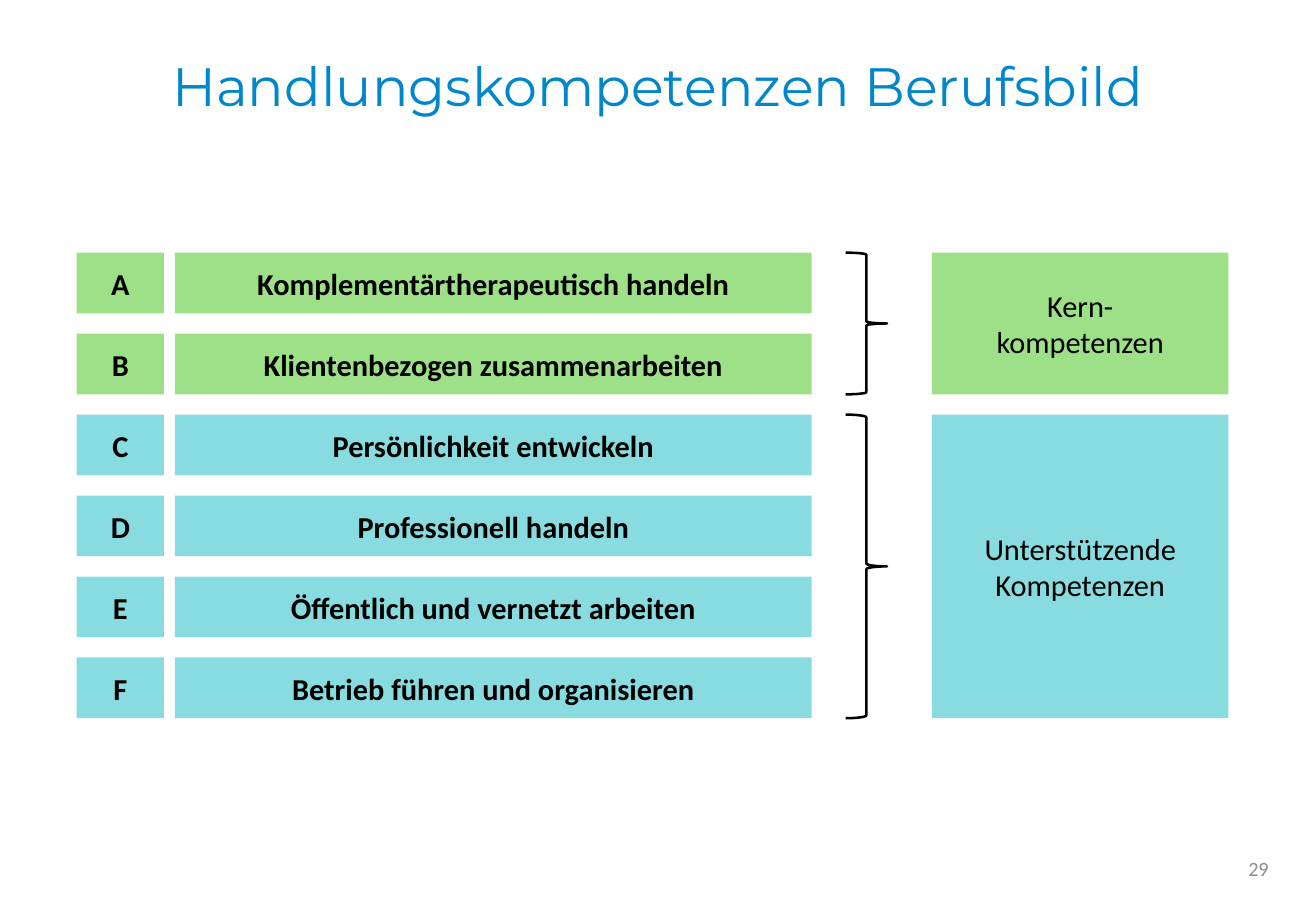
from pptx import Presentation
from pptx.dml.color import RGBColor
from pptx.enum.shapes import MSO_SHAPE
from pptx.enum.text import MSO_ANCHOR, PP_ALIGN
from pptx.util import Inches, Pt

# Content
TITLE = "Handlungskompetenzen Berufsbild"
PAGE_NUMBER = "29"
# fill, summary lines, brace curvature, competences
GROUPS = [
    ("9DE088", ["Kern-", "kompetenzen"], 0.052, [
        ("A", "Komplementärtherapeutisch handeln"),
        ("B", "Klientenbezogen zusammenarbeiten"),
    ]),
    ("88DCE0", ["Unterstützende", "Kompetenzen"], 0.069, [
        ("C", "Persönlichkeit entwickeln"),
        ("D", "Professionell handeln"),
        ("E", "Öffentlich und vernetzt arbeiten"),
        ("F", "Betrieb führen und organisieren"),
    ]),
]

# Grid in inches: each column is (left, width)
WIDTH, HEIGHT = 10.83, 7.5
LETTER, NAME, BRACE, SUMMARY = (0.63, 0.72), (1.44, 5.24), (6.96, 0.34), (7.67, 2.44)
TOP, ROW_HEIGHT, ROW_STEP = 2.08, 0.5, 2 / 3


def color(value):
    return RGBColor.from_string(value)


def write(shape, lines, size, ink="000000", font="Calibri", bold=False,
          align=PP_ALIGN.CENTER, wrap=False):
    frame = shape.text_frame
    frame.word_wrap = wrap
    frame.vertical_anchor = MSO_ANCHOR.MIDDLE
    frame.text = "\n".join(lines)
    for para in frame.paragraphs:
        para.alignment = align
        para.font.size = Pt(size)
        para.font.name = font
        para.font.bold = bold
        para.font.color.rgb = color(ink)


def add_shape(page, kind, column, top, height):
    left, width = column
    shape = page.shapes.add_shape(
        kind, Inches(left), Inches(top), Inches(width), Inches(height))
    shape.shadow.inherit = False
    return shape


def add_box(page, column, top, height, fill, lines, bold=False):
    box = add_shape(page, MSO_SHAPE.RECTANGLE, column, top, height)
    box.fill.solid()
    box.fill.fore_color.rgb = color(fill)
    box.line.fill.background()
    write(box, lines, 18, bold=bold)


def add_brace(page, top, height, curvature):
    brace = add_shape(page, MSO_SHAPE.RIGHT_BRACE, BRACE, top, height)
    brace.adjustments[0] = curvature
    brace.fill.background()
    brace.line.color.rgb = color("000000")
    brace.line.width = Pt(1.5)


def main():
    deck = Presentation()
    deck.slide_width, deck.slide_height = Inches(WIDTH), Inches(HEIGHT)
    page = deck.slides.add_slide(deck.slide_layouts[6])

    # Title and page number
    title = page.shapes.add_textbox(0, 0, deck.slide_width, Inches(1.39))
    write(title, [TITLE], 32, "0086CA", "Montserrat")
    number = page.shapes.add_textbox(
        Inches(8.01), Inches(6.95), Inches(2.53), Inches(0.4))
    write(number, [PAGE_NUMBER], 12, "8C8C8C", align=PP_ALIGN.RIGHT, wrap=True)

    # Competence rows, each group with its brace and summary
    top = TOP
    for fill, summary, curvature, competences in GROUPS:
        height = (len(competences) - 1) * ROW_STEP + ROW_HEIGHT
        add_brace(page, top, height, curvature)
        add_box(page, SUMMARY, top, height, fill, summary)
        for letter, name in competences:
            add_box(page, LETTER, top, ROW_HEIGHT, fill, [letter], bold=True)
            add_box(page, NAME, top, ROW_HEIGHT, fill, [name], bold=True)
            top += ROW_STEP

    deck.save("out.pptx")


if __name__ == "__main__":
    main()
